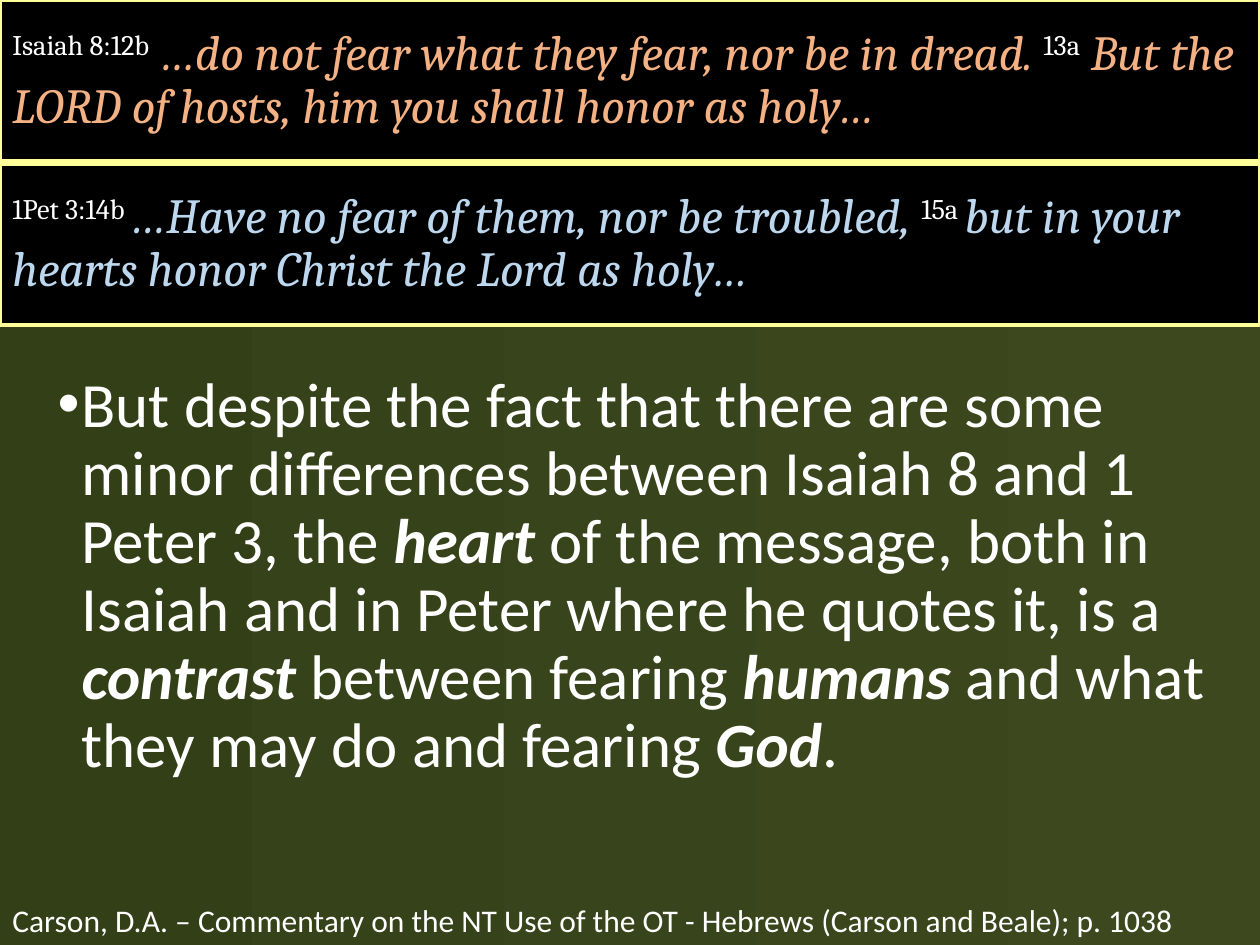
from dataclasses import dataclass

from lxml import etree
from pptx import Presentation
from pptx import util as u
from pptx.dml.color import RGBColor
from pptx.enum import shapes, text
from pptx.oxml import ns


@dataclass(frozen=True)
class Theme:
    white: str = "FFFFFF"
    black: str = "000000"
    frame: str = "FFFF99"
    isaiah: str = "F4B183"
    peter: str = "BDD7EE"
    background: tuple = ("3D481F", "334017")
    verse_font: str = "Cambria"
    body_font: str = "Calibri"
    verse_size: int = 28
    body_size: int = 36
    source_size: int = 18


class Page:
    """Places elements on one slide; boxes are (left, top, width, height) in one-inch grid units."""

    columns, rows = 10, 7.5

    def __init__(self, deck, theme):
        self.theme = theme
        deck.slide_width, deck.slide_height = u.Inches(self.columns), u.Inches(self.rows)
        self.slide = deck.slides.add_slide(deck.slide_layouts[6])

    def background(self):
        fill = self.slide.background.fill
        fill.gradient()
        fill.gradient_angle = 180
        for stop, color, position in zip(fill.gradient_stops, self.theme.background, (0, 1)):
            stop.color.rgb = RGBColor.from_string(color)
            stop.position = position

    def span(self, para, words, font, size, color, bold=False, italic=False, raised=False):
        span = para.add_run()
        span.text = words
        style = span.font
        style.name, style.size = font, u.Pt(size)
        style.bold, style.italic = bold, italic
        style.color.rgb = RGBColor.from_string(color)
        if raised:
            span._r.get_or_add_rPr().set("baseline", "30000")

    def text_box(self, area, size, pieces, bulleted=False):
        """Pieces alternate between plain and emphasised wording."""
        box = self.slide.shapes.add_textbox(*map(u.Inches, area))
        box.text_frame.word_wrap = True
        para = box.text_frame.paragraphs[0]
        if bulleted:
            self.bullet(para)
        for index, words in enumerate(pieces):
            strong = index % 2 == 1
            self.span(para, words, self.theme.body_font, size, self.theme.white, strong, strong)

    def bullet(self, para):
        para.line_spacing, para.space_before = 0.9, u.Pt(7.5)
        settings = para._p.get_or_add_pPr()
        indent = u.Inches(0.19)
        settings.set("marL", str(indent))
        settings.set("indent", str(-indent))
        etree.SubElement(settings, ns.qn("a:buFont"), typeface="Arial")
        etree.SubElement(settings, ns.qn("a:buChar"), char="•")

    def verse_panel(self, top, color, pieces):
        """Pieces alternate between raised references and verse wording."""
        theme = self.theme
        area = (0, top, self.columns, 1.28)
        box = self.slide.shapes.add_shape(shapes.MSO_SHAPE.RECTANGLE, *map(u.Inches, area))
        box.shadow.inherit = False
        box.fill.solid()
        box.fill.fore_color.rgb = RGBColor.from_string(theme.black)
        box.line.color.rgb = RGBColor.from_string(theme.frame)
        box.line.width = u.Pt(2)
        frame = box.text_frame
        frame.word_wrap = True
        frame.vertical_anchor = text.MSO_ANCHOR.MIDDLE
        para = frame.paragraphs[0]
        para.alignment = text.PP_ALIGN.LEFT
        para.line_spacing, para.space_before = 0.9, u.Pt(7.5)
        for index, words in enumerate(pieces):
            reference = index % 2 == 0
            self.span(para, words, theme.verse_font, theme.verse_size,
                      theme.white if reference else color,
                      italic=not reference, raised=reference)


def main():
    deck = Presentation()
    theme = Theme()
    page = Page(deck, theme)
    page.background()
    page.verse_panel(0, theme.isaiah, [
        "Isaiah 8:12b", " …do not fear what they fear, nor be in dread. ",
        "13a", " But the LORD of hosts, him you shall honor as holy…"])
    page.text_box((0.36, 2.91, 9.39, 4.13), theme.body_size, [
        "But despite the fact that there are some minor differences between "
        "Isaiah 8 and 1 Peter 3, the ", "heart",
        " of the message, both in Isaiah and in Peter where he quotes it, is a ", "contrast",
        " between fearing ", "humans", " and what they may do and fearing ", "God", "."],
        bulleted=True)
    page.text_box((0, 7.1, page.columns, 0.4), theme.source_size, [
        "Carson, D.A. – Commentary on the NT Use of the OT - Hebrews (Carson and Beale); p. 1038"])
    page.verse_panel(1.3, theme.peter, [
        "1Pet 3:14b ", "…Have no fear of them, nor be troubled, ",
        "15a ", "but in your hearts honor Christ the Lord as holy…"])
    deck.save("out.pptx")


if __name__ == "__main__":
    main()
